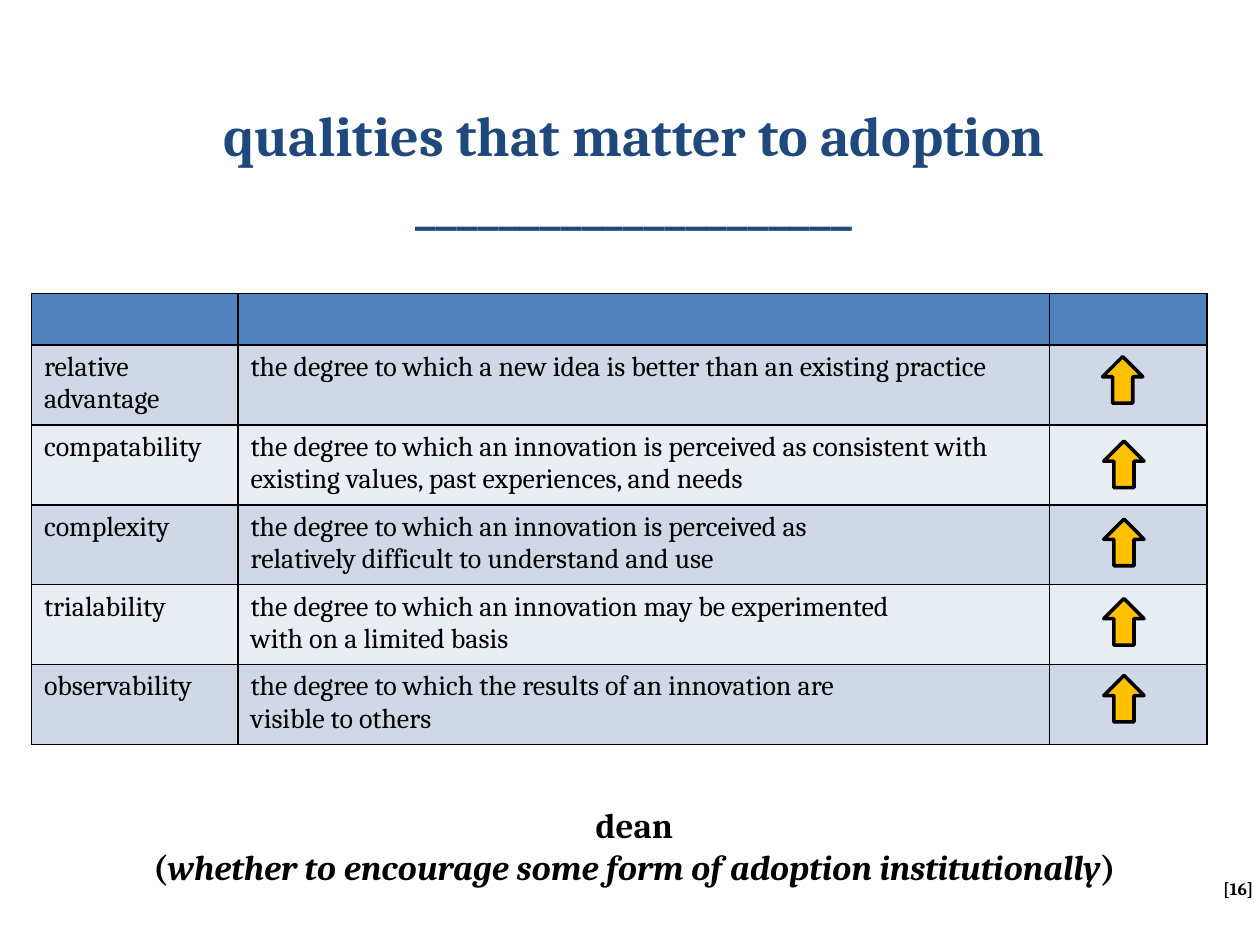
import pptx
import pptx.util
import pptx.dml.color
import pptx.enum.shapes
import pptx.enum.text
import pptx.oxml.ns
import lxml.etree

Inches, Pt = pptx.util.Inches, pptx.util.Pt
ALIGN = pptx.enum.text.PP_ALIGN
FONT = "Cambria"
HUES = {
    "title": "1F497D",
    "head": "4F81BD",
    "odd": "D0D8E8",
    "even": "E9EDF4",
    "arrow": "FFC000",
    "ink": "000000",
}
ROWS = [
    ("relative advantage",
     ["the degree to which a new idea is better than an existing practice"]),
    ("compatability",
     ["the degree to which an innovation is perceived as consistent with "
      "existing values, past experiences, and needs"]),
    ("complexity",
     ["the degree to which an innovation is perceived as",
      "relatively difficult to understand and use"]),
    ("trialability",
     ["the degree to which an innovation may be experimented",
      "with on a limited basis"]),
    ("observability",
     ["the degree to which the results of an innovation are",
      "visible to others"]),
]
COLS = [1.64, 6.44, 1.25]
HEAD, ROW = 0.41, 0.63


def tint(name):
    return pptx.dml.color.RGBColor.from_string(HUES[name])


def paint(item, name):
    item.fill.solid()
    item.fill.fore_color.rgb = tint(name)


def write(frame, lines, size, hue="ink", bold=False, align=ALIGN.LEFT):
    """Fill a frame; each line is a list of (text, italic) runs."""
    for i, line in enumerate(lines):
        para = frame.paragraphs[0] if i == 0 else frame.add_paragraph()
        para.alignment = align
        for text, slant in line:
            run = para.add_run()
            run.text = text
            font = run.font
            font.name, font.size = FONT, Pt(size)
            font.bold, font.italic = bold, slant
            font.color.rgb = tint(hue)


def place(shape, box):
    shape.left, shape.top, shape.width, shape.height = map(Inches, box)


def loosen(frame):
    frame.word_wrap = False
    frame.auto_size = pptx.enum.text.MSO_AUTO_SIZE.SHAPE_TO_FIT_TEXT
    frame.vertical_anchor = pptx.enum.text.MSO_ANCHOR.TOP


def add_title(slide, box):
    title = slide.shapes.title
    place(title, box)
    loosen(title.text_frame)
    lines = [[("qualities that matter to adoption", False)],
             [("_" * 21, False)]]
    write(title.text_frame, lines, 32, "title", True, ALIGN.CENTER)


def add_label(slide, box, lines, size, align=ALIGN.LEFT):
    label = slide.shapes.add_textbox(*map(Inches, box))
    loosen(label.text_frame)
    write(label.text_frame, lines, size, bold=True, align=align)


def frame_cell(cell, name):
    """Fill a cell and rule its four sides in black."""
    props = cell._tc.get_or_add_tcPr()
    qn = pptx.oxml.ns.qn
    for side in ("a:lnL", "a:lnR", "a:lnT", "a:lnB"):
        line = lxml.etree.SubElement(props, qn(side), w=str(Pt(1)))
        fill = lxml.etree.SubElement(line, qn("a:solidFill"))
        lxml.etree.SubElement(fill, qn("a:srgbClr"), val=HUES["ink"])
    paint(cell, name)


def add_grid(slide, box):
    shape = slide.shapes.add_table(len(ROWS) + 1, len(COLS), *map(Inches, box))
    table = shape.table
    for col, width in zip(table.columns, COLS):
        col.width = Inches(width)
    for i, row in enumerate(table.rows):
        row.height = Inches(ROW if i else HEAD)
        name = "head" if i == 0 else "odd" if i % 2 else "even"
        for cell in row.cells:
            frame_cell(cell, name)
    for i, (term, lines) in enumerate(ROWS, 1):
        write(table.cell(i, 0).text_frame, [[(term, False)]], 16)
        write(table.cell(i, 1).text_frame,
              [[(line, False)] for line in lines], 16)


def add_arrows(slide, box):
    """Stand one arrow in the last column of each row of the grid box."""
    left, top = box[:2]
    spots = [(8.5, 0.5), (8.51, 1.17), (8.51, 1.79), (8.51, 2.42), (8.51, 3.03)]
    for x, y in spots:
        arrow = slide.shapes.add_shape(
            pptx.enum.shapes.MSO_SHAPE.DOWN_ARROW,
            *map(Inches, (left + x, top + y, 0.32, 0.37)))
        arrow.rotation = 180
        arrow.shadow.inherit = False
        paint(arrow, "arrow")
        arrow.line.color.rgb = tint("ink")
        arrow.line.width = Pt(2)


def main():
    deck = pptx.Presentation()
    deck.slide_width, deck.slide_height = Inches(10), Inches(7.5)
    slide = deck.slides.add_slide(deck.slide_layouts[5])
    grid = (0.25, 2.33, sum(COLS), HEAD + ROW * len(ROWS))
    add_title(slide, (1.11, 0.75, 7.85, 1.18))
    add_grid(slide, grid)
    role = [[("dean", False)],
            [("(", False),
             ("whether to encourage some form of adoption institutionally", True),
             (")", False)]]
    add_label(slide, (0.59, 6.33, 8.89, 0.77), role, 20, ALIGN.CENTER)
    add_arrows(slide, grid)
    add_label(slide, (9.61, 6.92, 0.47, 0.27), [[("[16]", False)]], 10)
    deck.save("out.pptx")


if __name__ == "__main__":
    main()
